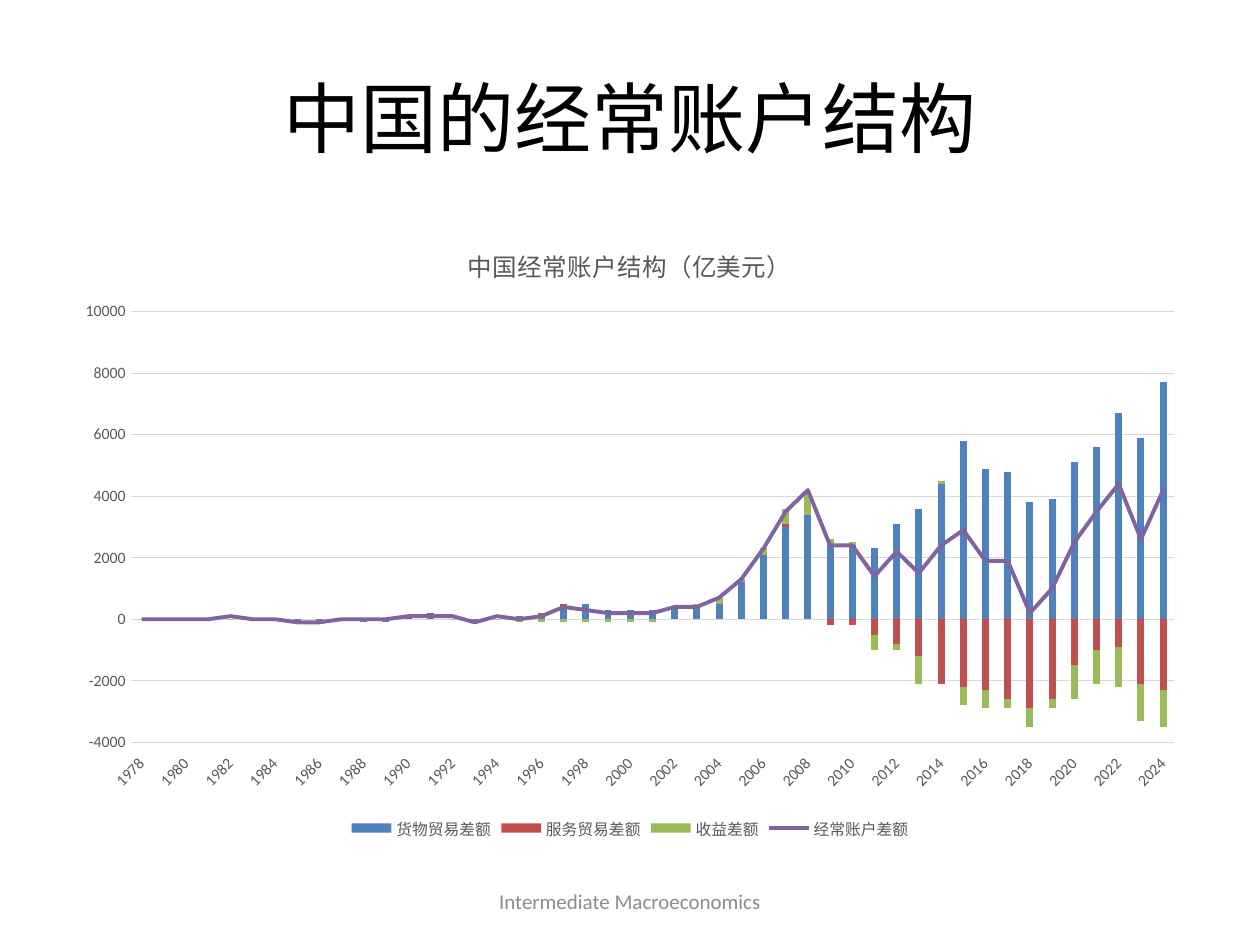
from lxml import etree
from pptx import Presentation
from pptx.chart.data import CategoryChartData
from pptx.dml.color import RGBColor
from pptx.enum.chart import (XL_CHART_TYPE, XL_LEGEND_POSITION, XL_MARKER_STYLE,
                             XL_TICK_LABEL_POSITION, XL_TICK_MARK)
from pptx.enum.text import MSO_ANCHOR, PP_ALIGN
from pptx.oxml.ns import qn
from pptx.util import Cm, Pt

STACKED = XL_CHART_TYPE.COLUMN_STACKED
BOTTOM = XL_LEGEND_POSITION.BOTTOM
BARE = XL_MARKER_STYLE.NONE
LOW = XL_TICK_LABEL_POSITION.LOW
NO_TICK = XL_TICK_MARK.NONE
MIDDLE = MSO_ANCHOR.MIDDLE
CENTER = PP_ALIGN.CENTER

FONT = "Calibri"
GRAY = "595959"
PALE = "D9D9D9"
UNIT = 100
YEARS = range(1978, 2025)
BARS = [
    ("货物贸易差额", "4F81BD",
     [0, 0, 0, 0, 0, 0, 0, -1, -1, 0, -1, -1, 1, 1, 0, -1, 0, 1, 1, 4, 5, 3, 3, 3,
      4, 4, 5, 12, 21, 30, 34, 24, 24, 23, 31, 36, 44, 58, 49, 48, 38, 39, 51, 56,
      67, 59, 77]),
    ("服务贸易差额", "C0504D",
     [0, 0, 0, 0, 0, 0, 0, 0, 0, 0, 0, 0, 0, 1, 0, 0, 0, 0, 1, 1, 0, 0, 0, 0,
      0, 0, 0, 0, 0, 1, 0, -2, -2, -5, -8, -12, -21, -22, -23, -26, -29, -26, -15,
      -10, -9, -21, -23]),
    ("收益差额", "9BBB59",
     [0, 0, 0, 0, 0, 0, 0, 0, 0, 0, 0, 0, 0, 0, 0, 0, 0, -1, -1, -1, -1, -1, -1, -1,
      0, 1, 2, 1, 2, 5, 7, 2, 1, -5, -2, -9, 1, -6, -6, -3, -6, -3, -11, -11,
      -13, -12, -12]),
]
TOTAL = ("经常账户差额", "8064A2",
         [0, 0, 0, 0, 1, 0, 0, -1, -1, 0, 0, 0, 1, 1, 1, -1, 1, 0, 1, 4, 3, 2, 2, 2,
          4, 4, 7, 13, 23, 35, 42, 24, 24, 14, 22, 15, 24, 29, 19, 19, 2, 10, 25, 35,
          44, 26, 42])


def color(code):
    return RGBColor.from_string(code)


def style(font, size, code):
    font.name = FONT
    font.size = Pt(size)
    font.bold = False
    font.color.rgb = color(code)


def stroke(line, code, width):
    line.color.rgb = color(code)
    line.width = Pt(width)


def add_text(slide, text, box, size, code):
    frame = slide.shapes.add_textbox(*map(Cm, box)).text_frame
    frame.word_wrap = True
    frame.vertical_anchor = MIDDLE
    frame.text = text
    par = frame.paragraphs[0]
    par.alignment = CENTER
    style(par.runs[0].font, size, code)


def split_line(chart):
    bar = chart.plots[0]._element
    ser = bar.findall(qn("c:ser"))[-1]
    flip = ser.find(qn("c:invertIfNegative"))
    if flip is not None:
        ser.remove(flip)
    line = etree.Element(qn("c:lineChart"))
    etree.SubElement(line, qn("c:grouping")).set("val", "standard")
    etree.SubElement(line, qn("c:varyColors")).set("val", "0")
    line.append(ser)
    etree.SubElement(line, qn("c:marker")).set("val", "1")
    for axis in bar.findall(qn("c:axId")):
        etree.SubElement(line, qn("c:axId")).set("val", axis.get("val"))
    bar.addnext(line)


def style_plots(chart):
    bars, lines = chart.plots
    bars.gap_width = 219
    bars.overlap = 100
    bars.vary_by_categories = False
    for ser, (_, code, _) in zip(bars.series, BARS):
        ser.invert_if_negative = False
        ser.format.fill.solid()
        ser.format.fill.fore_color.rgb = color(code)
    total = lines.series[0]
    total.smooth = False
    total.marker.style = BARE
    stroke(total.format.line, TOTAL[1], 2.25)


def style_axes(chart):
    years, scale = chart.category_axis, chart.value_axis
    for axis in (years, scale):
        axis.major_tick_mark = NO_TICK
        axis.minor_tick_mark = NO_TICK
        style(axis.tick_labels.font, 9, GRAY)
    years.tick_label_position = LOW
    stroke(years.format.line, PALE, 0.75)
    body = years._element.find(qn("c:txPr")).find(qn("a:bodyPr"))
    body.set("rot", "-2700000")
    body.set("vert", "horz")
    scale.minimum_scale = -4000
    scale.maximum_scale = 10000
    scale.major_unit = 2000
    scale.format.line.fill.background()
    stroke(scale.major_gridlines.format.line, PALE, 0.75)


def add_chart(slide, title, box):
    data = CategoryChartData()
    data.categories = [str(year) for year in YEARS]
    for name, _, vals in BARS + [TOTAL]:
        data.add_series(name, [val * UNIT for val in vals])
    chart = slide.shapes.add_chart(STACKED, *map(Cm, box), data).chart
    style(chart.font, 10, "000000")
    chart.has_title = True
    frame = chart.chart_title.text_frame
    frame.text = title
    style(frame.paragraphs[0].runs[0].font, 14, GRAY)
    chart.chart_title.include_in_layout = False
    chart.has_legend = True
    chart.legend.position = BOTTOM
    chart.legend.include_in_layout = False
    style(chart.legend.font, 9, GRAY)
    split_line(chart)
    style_plots(chart)
    style_axes(chart)


def main():
    deck = Presentation()
    deck.slide_width, deck.slide_height = Cm(25.4), Cm(19.05)
    slide = deck.slides.add_slide(deck.slide_layouts[6])
    add_text(slide, "中国的经常账户结构", (1.27, 0.76, 22.86, 3.18), 44, "000000")
    add_chart(slide, "中国经常账户结构（亿美元）", (1.27, 4.45, 22.86, 12.57))
    add_text(slide, "Intermediate Macroeconomics", (8.68, 17.66, 8.04, 1.01), 12, "8C8C8C")
    deck.save("out.pptx")


if __name__ == "__main__":
    main()
